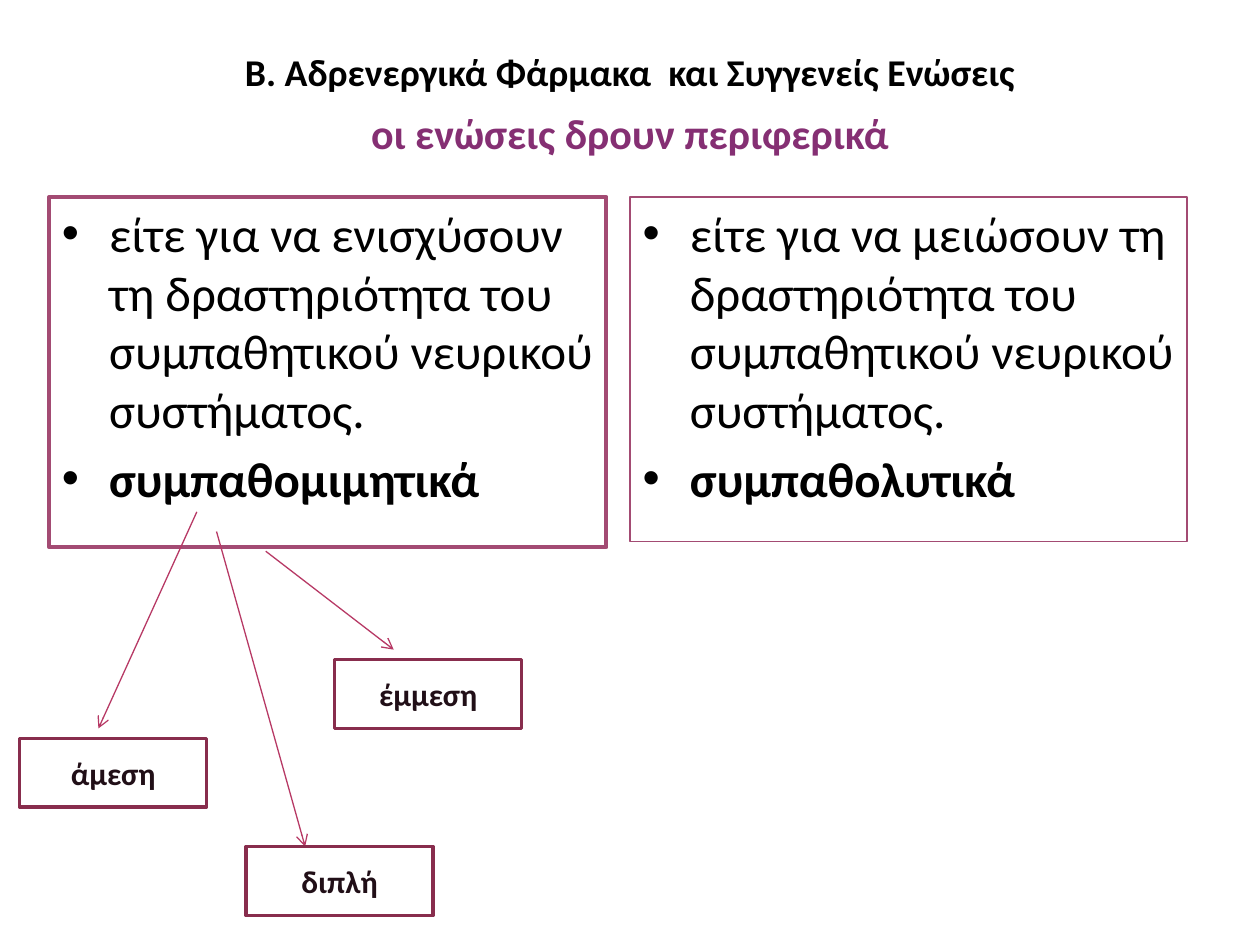
from typing import NamedTuple

from lxml import etree
from pptx import Presentation
from pptx import util as u
from pptx.dml.color import RGBColor
from pptx.enum import shapes, text
from pptx.oxml.ns import qn

FONT = "Calibri"
BLACK = RGBColor(0x00, 0x00, 0x00)
WHITE = RGBColor(0xFF, 0xFF, 0xFF)
PURPLE = RGBColor(0x85, 0x2F, 0x73)
PANEL_LINE = RGBColor(0xA3, 0x4B, 0x73)
ARROW_LINE = RGBColor(0xB7, 0x39, 0x65)
BOX_LINE = RGBColor(0x88, 0x2D, 0x4D)
BOX_TEXT = RGBColor(0x21, 0x0F, 0x17)

COLUMNS = 64  # square grid cells across the 10 inch slide
CELL = u.Inches(10) / COLUMNS


class Area(NamedTuple):
    column: float
    row: float
    columns: float
    rows: float


class Panel(NamedTuple):
    area: Area
    line_width: float
    effect: str
    drug_class: str


class Action(NamedTuple):
    label: str
    column: float
    row: float
    arrow_from: tuple[float, float]
    arrow_to: tuple[float, float]


HEADING = Area(3.2, 1.92, 57.6, 5.57)
SUBHEADING = Area(3.2, 1.92, 57.6, 9.6)
ACTION_SIZE = (9.5, 3.5)

PANELS = [
    Panel(Area(2.5, 10, 28.3, 17.8), 2.25,
          "είτε για να ενισχύσουν τη δραστηριότητα του συμπαθητικού νευρικού συστήματος.",
          "συμπαθομιμητικά"),
    Panel(Area(32, 10, 28.3, 17.5), 0.75,
          "είτε για να μειώσουν τη δραστηριότητα του συμπαθητικού νευρικού συστήματος.",
          "συμπαθολυτικά"),
]
ACTIONS = [
    Action("άμεση", 1, 37.5, (10, 26), (5, 37)),
    Action("διπλή", 12.5, 43, (11, 27), (15.5, 43)),
    Action("έμμεση", 17, 33.5, (13.5, 28), (20, 33)),
]


def cells(count: float) -> int:
    return round(count * CELL)


def place(shape, area: Area) -> None:
    shape.left, shape.top, shape.width, shape.height = map(cells, area)


def outline(shape, color: RGBColor, width: float) -> None:
    shape.line.color.rgb = color
    shape.line.width = u.Pt(width)


def format_runs(paragraph, size: float, color: RGBColor, bold: bool) -> None:
    for run in paragraph.runs:
        run.font.name = FONT
        run.font.size = u.Pt(size)
        run.font.color.rgb = color
        run.font.bold = bold


def write_centred(shape, words: str, size: float, color: RGBColor) -> None:
    frame = shape.text_frame
    frame.text = words
    frame.word_wrap = True
    frame.auto_size = text.MSO_AUTO_SIZE.NONE
    frame.vertical_anchor = text.MSO_ANCHOR.MIDDLE
    frame.paragraphs[0].alignment = text.PP_ALIGN.CENTER
    format_runs(frame.paragraphs[0], size, color, True)


def fill_panel(body, panel: Panel) -> None:
    place(body, panel.area)
    outline(body, PANEL_LINE, panel.line_width)
    frame = body.text_frame
    frame.text = f"{panel.effect}\n{panel.drug_class}"
    frame.auto_size = text.MSO_AUTO_SIZE.NONE
    for paragraph, bold in zip(frame.paragraphs, (False, True)):
        format_runs(paragraph, 28, BLACK, bold)


def draw_arrow(slide, action: Action) -> None:
    ends = map(cells, action.arrow_from + action.arrow_to)
    arrow = slide.shapes.add_connector(shapes.MSO_CONNECTOR.STRAIGHT, *ends)
    outline(arrow, ARROW_LINE, 0.75)
    etree.SubElement(arrow.line._get_or_add_ln(), qn("a:tailEnd"), type="arrow")
    etree.SubElement(arrow._element.spPr, qn("a:effectLst"))


def draw_action(slide, action: Action) -> None:
    box = slide.shapes.add_shape(
        shapes.MSO_SHAPE.RECTANGLE,
        *map(cells, (action.column, action.row, *ACTION_SIZE)))
    box.shadow.inherit = False
    box.fill.solid()
    box.fill.fore_color.rgb = WHITE
    outline(box, BOX_LINE, 2)
    write_centred(box, action.label, 18, BOX_TEXT)


def main() -> None:
    deck = Presentation()
    deck.slide_width, deck.slide_height = u.Inches(10), u.Inches(7.5)
    slide = deck.slides.add_slide(deck.slide_layouts.get_by_name("Two Content"))
    heading, *bodies = slide.placeholders

    place(heading, HEADING)
    write_centred(heading, "Β. Αδρενεργικά Φάρμακα  και Συγγενείς Ενώσεις", 21.6, BLACK)
    heading.text_frame.vertical_anchor = text.MSO_ANCHOR.TOP
    heading.text_frame.margin_top = u.Inches(0.09)

    subheading = slide.shapes.add_textbox(*map(cells, SUBHEADING))
    write_centred(subheading, "οι ενώσεις δρουν περιφερικά", 24, PURPLE)

    for body, panel in zip(bodies, PANELS):
        fill_panel(body, panel)
    for action in ACTIONS:
        draw_arrow(slide, action)
    for action in ACTIONS:
        draw_action(slide, action)

    deck.save("out.pptx")


if __name__ == "__main__":
    main()
